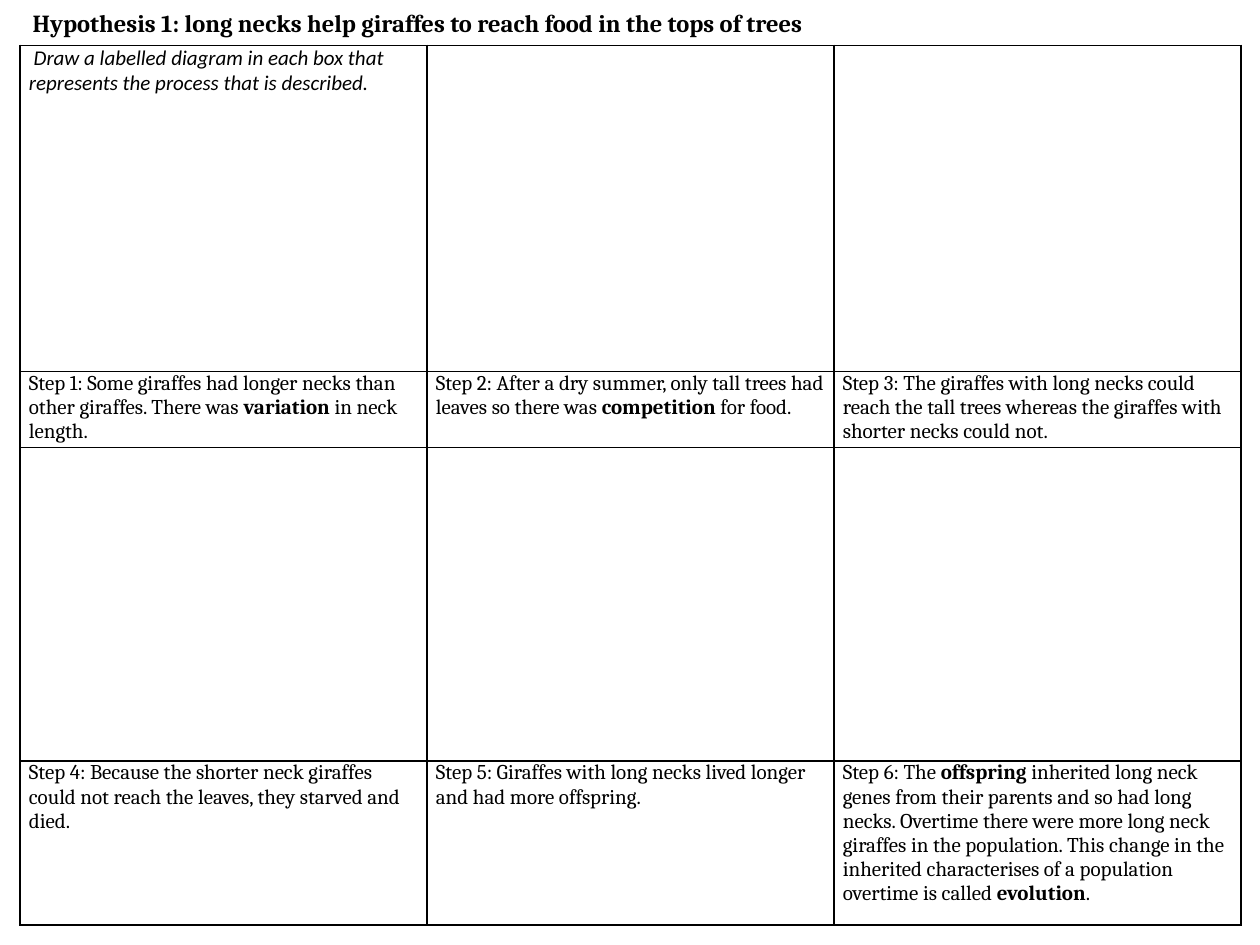
from lxml import etree
from pptx import Presentation
from pptx import util as u
from pptx.dml.color import RGBColor
from pptx.enum import text
from pptx.oxml import ns

BLACK = RGBColor(0, 0, 0)
COL = 3.23
ROWS = [2.59, 0.58, 2.49, 1.3]
TITLE = "Hypothesis 1: long necks help giraffes to reach food in the tops of trees"
TASK = " Draw a labelled diagram in each box that represents the process that is described."
STEPS = [
    "Step 1: Some giraffes had longer necks than other giraffes. "
    "There was **variation** in neck length.",
    "Step 2: After a dry summer, only tall trees had leaves so there was "
    "**competition** for food.",
    "Step 3: The giraffes with long necks could reach the tall trees whereas "
    "the giraffes with shorter necks could not.",
    "Step 4: Because the shorter neck giraffes could not reach the leaves, "
    "they starved and died.",
    "Step 5: Giraffes with long necks lived longer and had more offspring.",
    "Step 6: The **offspring** inherited long neck genes from their parents and so "
    "had long necks. Overtime there were more long neck giraffes in the population. "
    "This change in the inherited characterises of a population overtime is called "
    "**evolution**.",
]


def write(frame, words, size=12, font="Cambria", bold=False, italic=False):
    """Fill a text frame; words between ** marks are bold."""
    para = frame.paragraphs[0]
    para.alignment = text.PP_ALIGN.LEFT
    for i, part in enumerate(words.split("**")):
        run = para.add_run()
        run.text = part
        run.font.size = u.Pt(size)
        run.font.name = font
        run.font.bold = bold or i % 2 == 1
        run.font.italic = italic
        run.font.color.rgb = BLACK


class Sheet:
    def __init__(self, slide, color=BLACK, width=1):
        self.slide = slide
        self.color = color
        self.width = u.Pt(width)

    def title(self, words, x, y, w, h):
        shape = self.slide.shapes.title
        shape.left, shape.top, shape.width, shape.height = map(u.Inches, (x, y, w, h))
        frame = shape.text_frame
        frame.word_wrap = True
        frame.auto_size = text.MSO_AUTO_SIZE.SHAPE_TO_FIT_TEXT
        frame.vertical_anchor = text.MSO_ANCHOR.TOP
        write(frame, words, size=14, bold=True)

    def border(self, cell):
        props = cell._tc.get_or_add_tcPr()
        for side in ("a:lnL", "a:lnR", "a:lnT", "a:lnB"):
            line = etree.SubElement(props, ns.qn(side), w=str(self.width))
            fill = etree.SubElement(line, ns.qn("a:solidFill"))
            etree.SubElement(fill, ns.qn("a:srgbClr"), val=str(self.color))

    def grid(self, x, y, cols, rows):
        frame = self.slide.shapes.add_table(
            len(rows), len(cols), u.Inches(x), u.Inches(y),
            u.Inches(sum(cols)), u.Inches(sum(rows)))
        table = frame.table
        table.first_row = table.horz_banding = False
        for col, w in zip(table.columns, cols):
            col.width = u.Inches(w)
        for row, h in zip(table.rows, rows):
            row.height = u.Inches(h)
        for cell in table.iter_cells():
            cell.margin_left = cell.margin_right = u.Inches(0.07)
            cell.margin_top = cell.margin_bottom = 0
            self.border(cell)
            cell.fill.background()
        return table


def main():
    deck = Presentation()
    deck.slide_width, deck.slide_height = u.Inches(10), u.Inches(7.5)
    sheet = Sheet(deck.slides.add_slide(deck.slide_layouts[5]))
    sheet.title(TITLE, 0.16, 0.01, 9.9, 0.34)
    table = sheet.grid(0.16, 0.36, [COL] * 3, ROWS)
    write(table.cell(0, 0).text_frame, TASK, font="Calibri", italic=True)
    for i, step in enumerate(STEPS):
        row, col = divmod(i, 3)
        write(table.cell(2 * row + 1, col).text_frame, step)
    deck.save("out.pptx")


if __name__ == "__main__":
    main()
